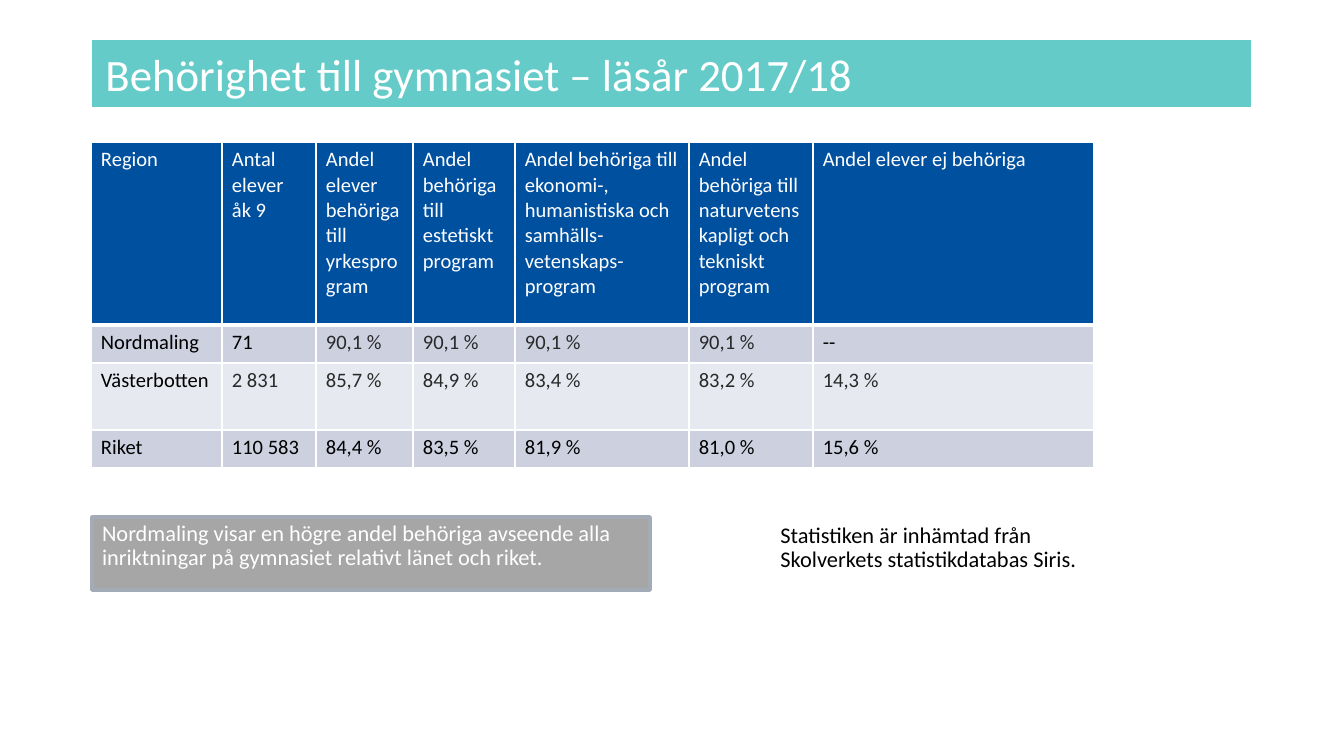
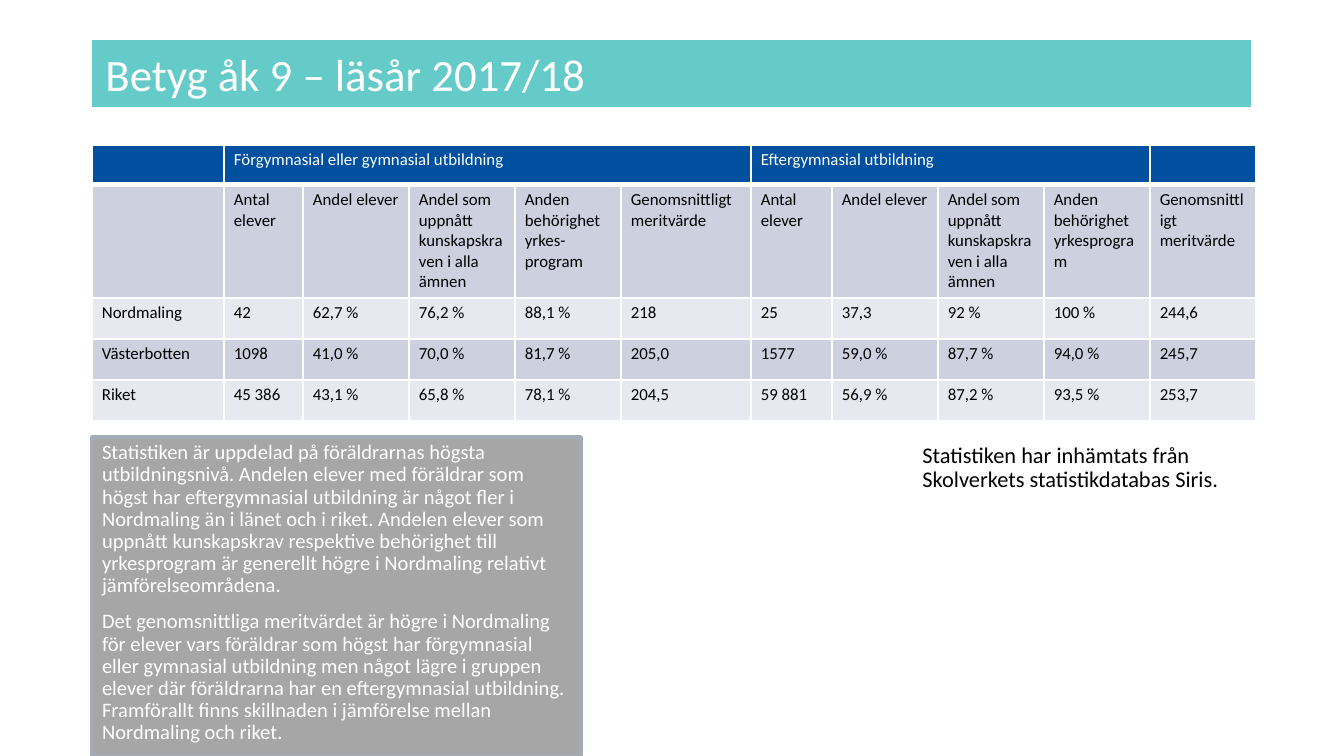
from lxml.etree import SubElement
from pptx import Presentation
from pptx.dml.color import RGBColor
from pptx.enum.text import MSO_ANCHOR, MSO_AUTO_SIZE, PP_ALIGN
from pptx.oxml.ns import qn
from pptx.util import Emu, Pt

PX_PER_INCH = 134.4
FONT = "Calibri"
WHITE, BLACK, CHARCOAL = "FFFFFF", "000000", "292929"
TURQUOISE, NAVY, GREY, GREY_EDGE = "64CBC9", "0050A0", "A6A6A6", "A3ABB6"
BANDS = ("CCD0DF", "E7E9F0")
TIGHT_MARGINS = {"margin_left": 10, "margin_right": 10, "margin_top": 5, "margin_bottom": 5}

ELIGIBILITY_COLUMNS = (131, 94, 97, 102, 174, 124, 281)
ELIGIBILITY_HEIGHTS = (183, 38, 67, 38)
ELIGIBILITY = (
    ("Region", "Antal elever åk 9", "Andel elever behöriga till yrkesprogram",
     "Andel behöriga till estetiskt program",
     "Andel behöriga till ekonomi-, humanistiska och samhälls-vetenskaps-program",
     "Andel behöriga till naturvetenskapligt och tekniskt program",
     "Andel elever ej behöriga"),
    ("Nordmaling", "71", "90,1 %", "90,1 %", "90,1 %", "90,1 %", "--"),
    ("Västerbotten", "2 831", "85,7 %", "84,9 %", "83,4 %", "83,2 %", "14,3 %"),
    ("Riket", "110 583", "84,4 %", "83,5 %", "81,9 %", "81,0 %", "15,6 %"),
)
# Row number -> columns set in charcoal instead of black
ELIGIBILITY_CHARCOAL = {1: range(2, 6), 2: range(1, 7)}

GRADE_COLUMNS = (132, 79, 106, 106, 106, 130, 81, 106, 106, 106, 106)
GRADE_HEIGHTS = (40, 113, 41, 41, 41)
GRADE_SPANS = ((1, 5), (6, 9))
GRADES = (
    ("", "Förgymnasial eller gymnasial utbildning", "", "", "", "",
     "Eftergymnasial utbildning", "", "", "", ""),
    ("", "Antal elever", "Andel elever", "Andel som uppnått kunskapskraven i alla ämnen",
     "Anden behörighet yrkes-program", "Genomsnittligt meritvärde",
     "Antal elever", "Andel elever", "Andel som uppnått kunskapskraven i alla ämnen",
     "Anden behörighet yrkesprogram", "Genomsnittligt meritvärde"),
    ("Nordmaling", "42", "62,7 %", "76,2 %", "88,1 %", "218",
     "25", "37,3", "92 %", "100 %", "244,6"),
    ("Västerbotten", "1098", "41,0 %", "70,0 %", "81,7 %", "205,0",
     "1577", "59,0 %", "87,7 %", "94,0 %", "245,7"),
    ("Riket", "45 386", "43,1 %", "65,8 %", "78,1 %", "204,5",
     "59 881", "56,9 %", "87,2 %", "93,5 %", "253,7"),
)


def px(length):
    return Emu(round(length * 914400 / PX_PER_INCH))


def colour(hex_code):
    return RGBColor.from_string(hex_code)


def set_lengths(target, lengths):
    for attribute, length in lengths.items():
        setattr(target, attribute, px(length))


def move(placeholder, left, top, width, height):
    set_lengths(placeholder, {"left": left, "top": top, "width": width, "height": height})


def paint(target, hex_code):
    target.fill.solid()
    target.fill.fore_color.rgb = colour(hex_code)


def write(paragraph, text, size, hex_code):
    run = paragraph.add_run()
    run.text = text
    for attribute, value in {"name": FONT, "size": Pt(size), "bold": False}.items():
        setattr(run.font, attribute, value)
    run.font.color.rgb = colour(hex_code)


def prepare_frame(frame, anchor):
    for attribute, value in {"word_wrap": True, "auto_size": MSO_AUTO_SIZE.NONE,
                             "vertical_anchor": anchor}.items():
        setattr(frame, attribute, value)


# Title band
def set_title(slide, text):
    title = slide.shapes.title
    move(title, 92, 40, 1159, 67)
    paint(title, TURQUOISE)
    prepare_frame(title.text_frame, MSO_ANCHOR.MIDDLE)
    heading = title.text_frame.paragraphs[0]
    heading.alignment = PP_ALIGN.LEFT
    write(heading, text, 24, WHITE)


# Unbulleted body text
def fill_body(body, box, texts, size, hex_code):
    move(body, *box)
    frame = body.text_frame
    prepare_frame(frame, MSO_ANCHOR.TOP)
    for index, text in enumerate(texts):
        paragraph = frame.add_paragraph() if index else frame.paragraphs[0]
        properties = paragraph._p.get_or_add_pPr()
        properties.set("marL", "0")
        properties.set("indent", "0")
        SubElement(properties, qn("a:buNone"))
        for attribute, value in {"alignment": PP_ALIGN.LEFT, "line_spacing": 0.9,
                                 "space_before": Pt(7.5 if index else 0)}.items():
            setattr(paragraph, attribute, value)
        write(paragraph, text, size, hex_code)


def add_source(slide, box, text):
    fill_body(slide.placeholders[1], box, [text], 12, BLACK)


def add_comment(slide, box, texts, size):
    comment = slide.placeholders[2]
    fill_body(comment, box, texts, size, WHITE)
    paint(comment, GREY)
    comment.line.color.rgb = colour(GREY_EDGE)
    comment.line.width = Pt(2)
    set_lengths(comment.text_frame, TIGHT_MARGINS)


# Statistics table
def draw_borders(cell, bottom_width):
    properties = cell._tc.get_or_add_tcPr()
    for side, width in {"L": 1, "R": 1, "T": 1, "B": bottom_width}.items():
        edge = SubElement(properties, qn(f"a:ln{side}"), w=str(Pt(width)))
        SubElement(SubElement(edge, qn("a:solidFill")), qn("a:srgbClr"), val=WHITE)


def add_statistics(slide, left, top, columns, heights, rows, size, charcoal=None, spans=()):
    table = slide.shapes.add_table(len(rows), len(columns), px(left), px(top),
                                   px(sum(columns)), px(sum(heights))).table
    for column, width in zip(table.columns, columns):
        column.width = px(width)
    for row, height in zip(table.rows, heights):
        row.height = px(height)
    for r, texts in enumerate(rows):
        for c, text in enumerate(texts):
            cell = table.cell(r, c)
            set_lengths(cell, TIGHT_MARGINS)
            draw_borders(cell, 1 if r else 3)
            paint(cell, BANDS[(r - 1) % 2] if r else NAVY)
            paragraph = cell.text_frame.paragraphs[0]
            if text:
                is_charcoal = c in (charcoal or {}).get(r, ())
                body_colour = CHARCOAL if is_charcoal else BLACK
                write(paragraph, text, size, body_colour if r else WHITE)
            else:
                SubElement(paragraph._p, qn("a:endParaRPr"), sz=str(size * 100))
    for first, last in spans:
        table.cell(0, first).merge(table.cell(0, last))


def add_slide(deck, title):
    slide = deck.slides.add_slide(deck.slide_layouts.get_by_name("Two Content"))
    set_title(slide, title)
    return slide


def main():
    deck = Presentation()
    deck.slide_width, deck.slide_height = px(1344), px(756)

    # Eligibility for upper secondary school
    eligibility = add_slide(deck, "Behörighet till gymnasiet – läsår 2017/18")
    add_source(eligibility, (767, 517, 325, 99),
               "Statistiken är inhämtad från Skolverkets statistikdatabas Siris.")
    add_statistics(eligibility, 91, 142, ELIGIBILITY_COLUMNS, ELIGIBILITY_HEIGHTS,
                   ELIGIBILITY, 11, charcoal=ELIGIBILITY_CHARCOAL)
    add_comment(eligibility, (92, 517, 558, 73), [
        "Nordmaling visar en högre andel behöriga avseende alla inriktningar på "
        "gymnasiet relativt länet och riket."], 12)

    # Grades by the parents' education
    grades = add_slide(deck, "Betyg åk 9 – läsår 2017/18")
    add_statistics(grades, 92, 145, GRADE_COLUMNS, GRADE_HEIGHTS, GRADES, 9,
                   spans=GRADE_SPANS)
    add_source(grades, (909, 437, 348, 146),
               "Statistiken har inhämtats från Skolverkets statistikdatabas Siris.")
    add_comment(grades, (92, 437, 489, 319), [
        "Statistiken är uppdelad på föräldrarnas högsta utbildningsnivå. Andelen elever "
        "med föräldrar som högst har eftergymnasial utbildning är något fler i Nordmaling "
        "än i länet och i riket. Andelen elever som uppnått kunskapskrav respektive "
        "behörighet till yrkesprogram är generellt högre i Nordmaling relativt "
        "jämförelseområdena.",
        "Det genomsnittliga meritvärdet är högre i Nordmaling för elever vars föräldrar "
        "som högst har förgymnasial eller gymnasial utbildning men något lägre i gruppen "
        "elever där föräldrarna har en eftergymnasial utbildning. Framförallt finns "
        "skillnaden i jämförelse mellan Nordmaling och riket."], 11)

    deck.save("out.pptx")


if __name__ == "__main__":
    main()
